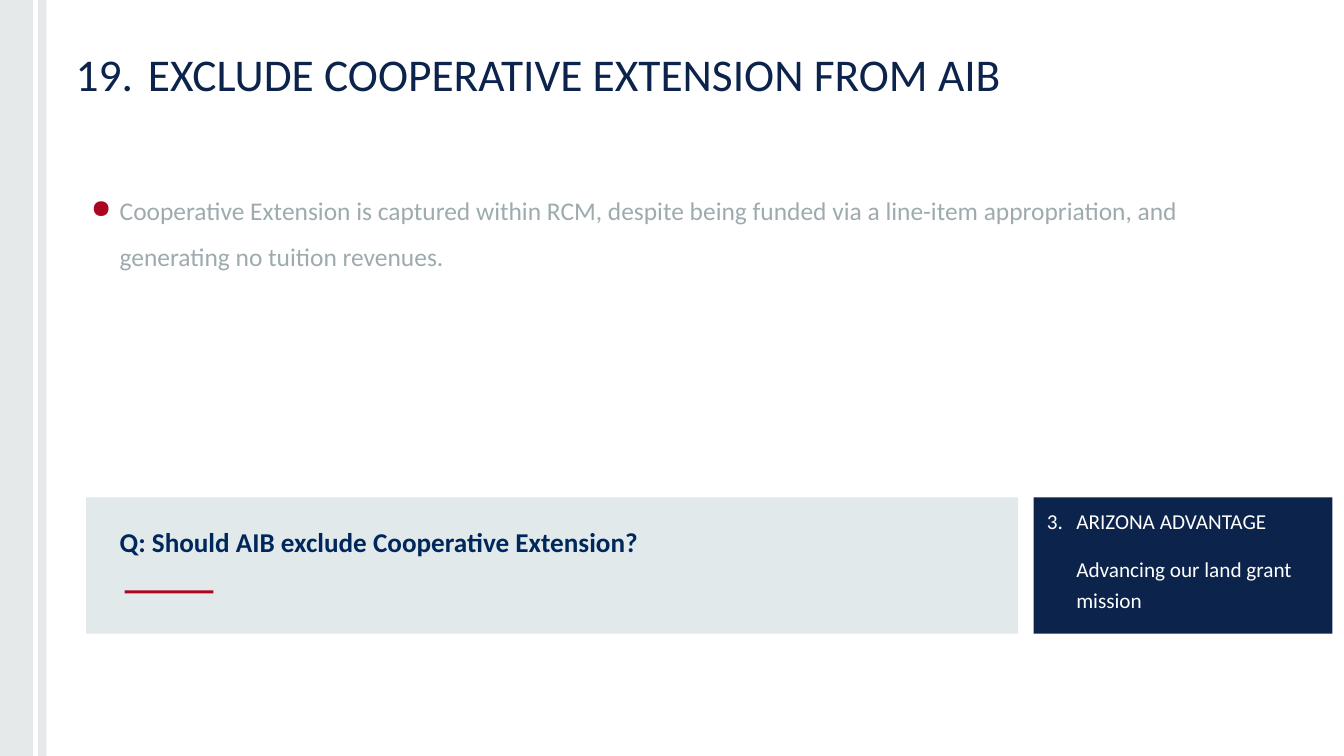
from lxml import etree
from pptx import Presentation
from pptx.dml.color import RGBColor
from pptx.enum.shapes import MSO_SHAPE
from pptx.enum.text import MSO_ANCHOR, MSO_AUTO_SIZE, PP_ALIGN
from pptx.oxml.ns import qn
from pptx.util import Pt

RECTANGLE = MSO_SHAPE.RECTANGLE
TOP, MIDDLE = MSO_ANCHOR.TOP, MSO_ANCHOR.MIDDLE
LEFT = PP_ALIGN.LEFT
NO_FIT = MSO_AUTO_SIZE.NONE

FONT = "Calibri"
COLORS = {
    "navy": "0C234B",
    "question": "00275B",
    "red": "AB0520",
    "gray": "9EABAE",
    "pale": "E2E9EB",
    "white": "FFFFFF",
}
SLIDE_WIDTH, SLIDE_HEIGHT = 1583.28, 890.64
PANEL_TOP, PANEL_HEIGHT = 586.1, 160.5


def rgb(name):
    return RGBColor.from_string(COLORS[name])


def add_block(slide, left, top, width, height, color, opacity=100):
    """Add a borderless rectangle; opacity is a percentage."""
    block = slide.shapes.add_shape(
        RECTANGLE, Pt(left), Pt(top), Pt(width), Pt(height))
    block.shadow.inherit = False
    block.fill.solid()
    block.fill.fore_color.rgb = rgb(color)
    block.line.fill.background()
    if opacity < 100:
        tint = block.fill._xPr.find(qn("a:solidFill"))[0]
        etree.SubElement(tint, qn("a:alpha"), val=str(opacity * 1000))
    return block


def add_text_box(slide, left, top, width, height):
    box = slide.shapes.add_textbox(Pt(left), Pt(top), Pt(width), Pt(height))
    return box.text_frame


def set_frame(frame, insets=(7.2, 7.2, 7.2, 7.2), anchor=TOP):
    """Set wrapping, anchor and the left, top, right, bottom insets."""
    frame.word_wrap = True
    frame.auto_size = NO_FIT
    frame.vertical_anchor = anchor
    frame.margin_left, frame.margin_top, frame.margin_right, frame.margin_bottom = (
        Pt(inset) for inset in insets)


def set_indent(paragraph, left, first_line=0):
    properties = paragraph._p.get_or_add_pPr()
    properties.set("marL", str(Pt(left)))
    properties.set("indent", str(Pt(first_line)))


def set_bullet(paragraph, character, color):
    properties = paragraph._p.get_or_add_pPr()
    bullet_color = etree.SubElement(properties, qn("a:buClr"))
    etree.SubElement(bullet_color, qn("a:srgbClr"), val=COLORS[color])
    etree.SubElement(properties, qn("a:buChar"), char=character)


def write(paragraph, text, size, color, bold=False, line_spacing=1.0):
    paragraph.alignment = LEFT
    paragraph.line_spacing = line_spacing
    run = paragraph.add_run()
    run.text = text
    run.font.name = FONT
    run.font.size = Pt(size)
    run.font.bold = bold
    run.font.color.rgb = rgb(color)


def add_sidebar(slide):
    add_block(slide, 0, 0, 54.72, SLIDE_HEIGHT, "gray", opacity=25)
    add_block(slide, 38.9, 0, 5.76, SLIDE_HEIGHT, "white")


def add_title(slide):
    title = slide.shapes.title
    title.left, title.top = Pt(80.6), Pt(47.5)
    title.width, title.height = Pt(1190.9), Pt(71.3)
    set_frame(title.text_frame)
    heading = title.text_frame.paragraphs[0]
    set_indent(heading, 86.4, -85)
    write(heading, "19.\tEXCLUDE COOPERATIVE EXTENSION FROM AIB", 53.5, "navy")


def add_background_point(slide):
    frame = add_text_box(slide, 97.9, 204.5, 1404.7, 362.9)
    set_frame(frame, (7.2, 7.2, 7.2, 5.76))
    point = frame.paragraphs[0]
    set_indent(point, 36, -33.8)
    set_bullet(point, "●", "red")
    write(point, "Cooperative Extension is captured within RCM, despite being "
          "funded via a line-item appropriation, and generating no tuition "
          "revenues.", 30, "gray", line_spacing=1.5)


def add_question(slide):
    add_block(slide, 101.5, PANEL_TOP, 1098, PANEL_HEIGHT, "pale")
    frame = add_text_box(slide, 133.9, 614.9, 1065.6, 46.8)
    set_frame(frame, anchor=MIDDLE)
    write(frame.paragraphs[0], "Q: Should AIB exclude Cooperative Extension?",
          32, "question", bold=True)
    add_block(slide, 146.9, 695.5, 104.4, 3.6, "red")


def add_advantage(slide):
    panel = add_block(slide, 1217.5, PANEL_TOP, 352.1, PANEL_HEIGHT, "navy")
    frame = panel.text_frame
    set_frame(frame, (14.4, 7.2, 7.2, 3.6))
    pillar = frame.paragraphs[0]
    set_indent(pillar, 36, -34.6)
    write(pillar, "3.\tARIZONA ADVANTAGE", 25, "white", line_spacing=1.2)
    mission = frame.add_paragraph()
    set_indent(mission, 36)
    mission.space_before = Pt(20.5)
    write(mission, "Advancing our land grant mission", 25, "white",
          line_spacing=1.2)


def main():
    deck = Presentation()
    deck.slide_width, deck.slide_height = Pt(SLIDE_WIDTH), Pt(SLIDE_HEIGHT)
    slide = deck.slides.add_slide(deck.slide_layouts.get_by_name("Title Only"))
    add_sidebar(slide)
    add_title(slide)
    add_background_point(slide)
    add_question(slide)
    add_advantage(slide)
    deck.save("out.pptx")


if __name__ == "__main__":
    main()
